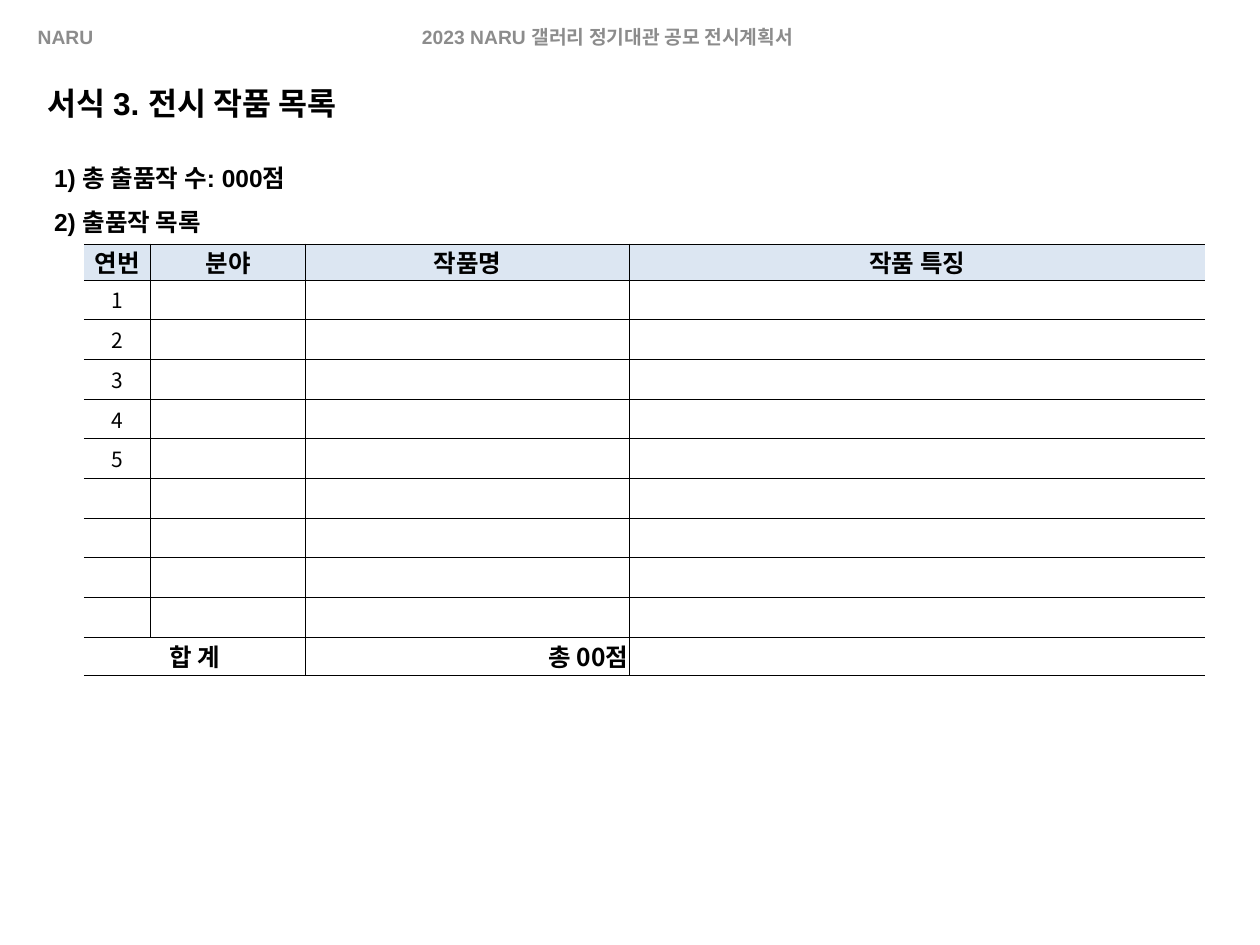
from lxml import etree
from pptx import Presentation
from pptx.dml.color import RGBColor
from pptx.enum import text as t
from pptx.oxml import ns
from pptx.util import Pt

HUES = {"ink": "000000", "gray": "8C8C8C", "head": "DCE6F2"}
SANS, HANGUL = "Arial", "Noto Sans CJK KR"
LEFT, MID, RIGHT = t.PP_ALIGN.LEFT, t.PP_ALIGN.CENTER, t.PP_ALIGN.RIGHT
COLS = (38, 88.75, 185, 329)
HEAD, BODY, FOOT, COUNT = 20.5, 22.68, 19.4, 9
TITLES = ("연번", "분야", "작품명", "작품 특징")


def write(frame, *lines, size=14, font=SANS, hue="ink", bold=True, align=LEFT, gap=1.0):
    """Put formatted lines into a text frame."""
    for i, line in enumerate(lines):
        para = frame.add_paragraph() if i else frame.paragraphs[0]
        para.alignment, para.line_spacing = align, gap
        run = para.add_run()
        run.text = line
        face = run.font
        face.name, face.size, face.bold = font, Pt(size), bold
        face.color.rgb = RGBColor.from_string(HUES[hue])
        props = run._r.get_or_add_rPr()
        etree.SubElement(props, ns.qn("a:ea"), typeface=HANGUL)


def place(shape, x, y, w, h):
    """Set the bounds of a shape."""
    shape.left, shape.top, shape.width, shape.height = Pt(x), Pt(y), Pt(w), Pt(h)


def label(slide, box, *lines, anchor=t.MSO_ANCHOR.TOP, **style):
    """Add a wrapped text box."""
    frame = slide.shapes.add_textbox(*map(Pt, box)).text_frame
    frame.word_wrap, frame.vertical_anchor = True, anchor
    write(frame, *lines, **style)


def rule(cell, sides):
    """Draw thin lines on the given sides of a cell and clear the others."""
    props = cell._tc.get_or_add_tcPr()
    for i, side in enumerate("LRTB"):
        line = etree.Element(ns.qn("a:ln" + side), w=str(Pt(0.5)))
        if side in sides:
            fill = etree.SubElement(line, ns.qn("a:solidFill"))
            etree.SubElement(fill, ns.qn("a:srgbClr"), val=HUES["ink"])
        else:
            etree.SubElement(line, ns.qn("a:noFill"))
        props.insert(i, line)


def fill_cell(cell, words, sides, tint=None, **style):
    """Fill, border and write one table cell."""
    cell.margin_left = cell.margin_right = Pt(0.75)
    cell.margin_top = cell.margin_bottom = Pt(0)
    cell.vertical_anchor = t.MSO_ANCHOR.MIDDLE
    if tint:
        cell.fill.solid()
        cell.fill.fore_color.rgb = RGBColor.from_string(HUES[tint])
    else:
        cell.fill.background()
    rule(cell, sides)
    write(cell.text_frame, words, font=HANGUL, **style)


def add_list(slide):
    """Add the table of works with its head and total rows."""
    highs = [HEAD] + [BODY] * COUNT + [FOOT]
    last, end = len(highs) - 1, len(COLS) - 1
    box = map(Pt, (48, 139.5, sum(COLS), sum(highs)))
    grid = slide.shapes.add_table(len(highs), len(COLS), *box).table
    grid.first_row = grid.horz_banding = False
    for col, wide in zip(grid.columns, COLS):
        col.width = Pt(wide)
    for row, high in zip(grid.rows, highs):
        row.height = Pt(high)
    grid.cell(last, 0).merge(grid.cell(last, 1))
    words = {(0, c): name for c, name in enumerate(TITLES)}
    words.update({(r, 0): str(r) for r in range(1, 6)})
    words.update({(last, 0): "합 계", (last, 2): "총 00점"})
    for r in range(len(highs)):
        for c in range(len(COLS)):
            sides = "TB" + ("L" if c else "") + ("R" if c < end else "")
            bold = r in (0, last)
            fill_cell(grid.cell(r, c), words.get((r, c), ""), sides,
                      tint=None if r else "head", bold=bold,
                      size=14 if bold and (r, c) in words else 12,
                      align=RIGHT if (r, c) == (last, 2) else MID)


def main():
    """Build and save the slide."""
    deck = Presentation()
    deck.slide_width, deck.slide_height = Pt(720), Pt(540)
    slide = deck.slides.add_slide(deck.slide_layouts[5])
    top = {"size": 11, "hue": "gray", "anchor": t.MSO_ANCHOR.MIDDLE}
    label(slide, (14.4, 6.5, 228, 28.8), "NARU", **top)
    label(slide, (234, 6.5, 250.5, 28.8), "2023 NARU 갤러리 정기대관 공모 전시계획서", **top)
    title = slide.shapes.title
    place(title, 20.2, 44.6, 442, 28.8)
    title.text_frame.vertical_anchor = t.MSO_ANCHOR.TOP
    title.text_frame.auto_size = t.MSO_AUTO_SIZE.SHAPE_TO_FIT_TEXT
    write(title.text_frame, "서식 3. 전시 작품 목록", size=18)
    add_list(slide)
    label(slide, (23.8, 81.4, 657.4, 54.7),
          "1) 총 출품작 수: 000점", "2) 출품작 목록", gap=1.5)
    deck.save("out.pptx")


if __name__ == "__main__":
    main()
